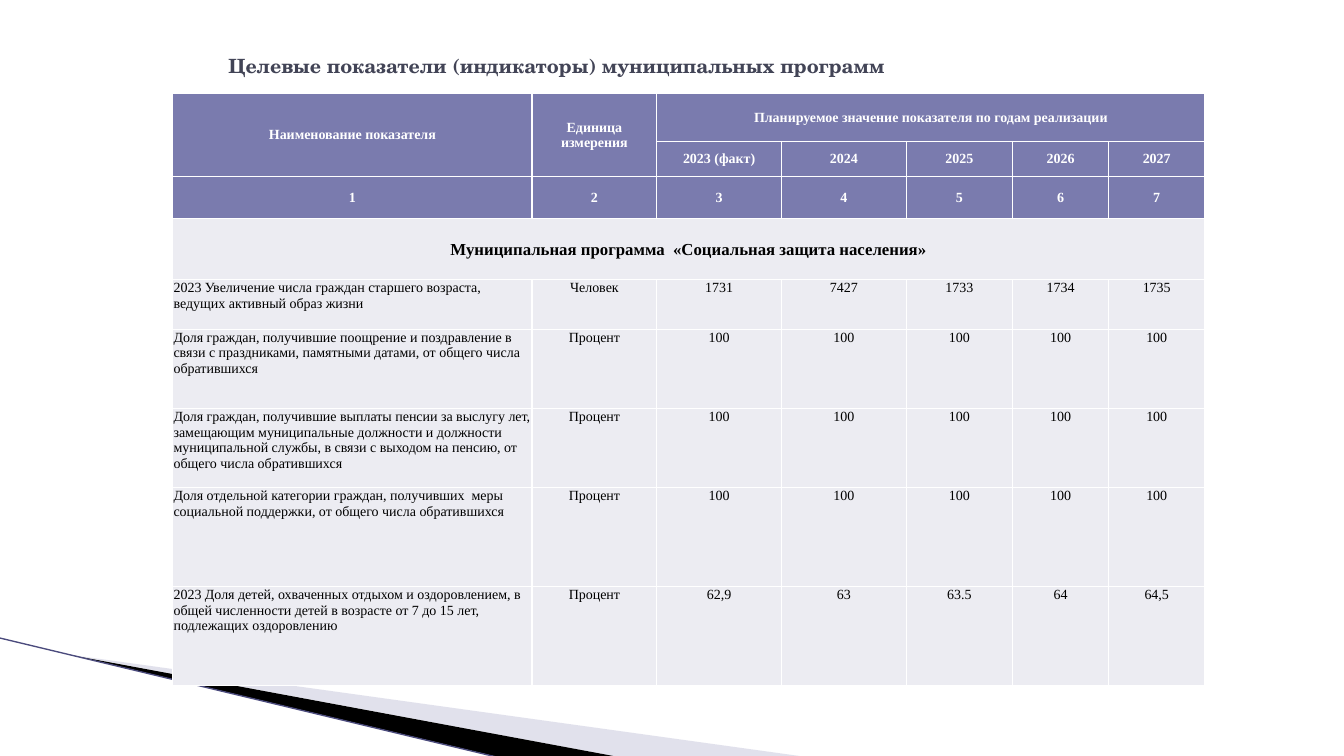
from lxml import etree
from pptx import Presentation
from pptx.dml.color import RGBColor
from pptx.enum.shapes import MSO_CONNECTOR
from pptx.enum.text import MSO_ANCHOR, PP_ALIGN
from pptx.oxml.ns import qn
from pptx.util import Pt

LINE = MSO_CONNECTOR.STRAIGHT
TOP, MIDDLE = MSO_ANCHOR.TOP, MSO_ANCHOR.MIDDLE
LEFT, CENTER = PP_ALIGN.LEFT, PP_ALIGN.CENTER

HEAD = [
    ["Наименование показателя", "Единица измерения",
     "Планируемое значение показателя по годам реализации", "", "", "", ""],
    ["", "", "2023 (факт)", "2024", "2025", "2026", "2027"],
    [str(num) for num in range(1, 8)],
]
GROUP = ["Муниципальная программа  «Социальная защита населения»"] + [""] * 6
FULL = ["Процент"] + ["100"] * 5
BODY = [
    ["2023 Увеличение числа граждан старшего возраста, ведущих активный образ жизни",
     "Человек", "1731", "7427", "1733", "1734", "1735"],
    ["Доля граждан, получившие поощрение и поздравление в связи с праздниками, "
     "памятными датами, от общего числа обратившихся"] + FULL,
    ["Доля граждан, получившие выплаты пенсии за выслугу лет, замещающим "
     "муниципальные должности и должности муниципальной службы, в связи с "
     "выходом на пенсию, от общего числа обратившихся"] + FULL,
    ["Доля отдельной категории граждан, получивших  меры социальной поддержки, "
     "от общего числа обратившихся"] + FULL,
    ["2023 Доля детей, охваченных отдыхом и оздоровлением, в общей численности "
     "детей в возрасте от 7 до 15 лет, подлежащих оздоровлению",
     "Процент", "62,9", "63", "63.5", "64", "64,5"],
]
WIDTHS = [256.6, 89.2, 89, 89.2, 76, 68.6, 68.6]
HEIGHTS = [34.6, 25, 30.3, 43.6, 35.4, 56.6, 56.6, 70.7, 70.7]
MERGES = [(0, 0, 1, 0), (0, 1, 1, 1), (0, 2, 0, 6), (3, 0, 3, 6)]


def tint(code):
    return RGBColor.from_string(code)


class Page:
    serif = "Times New Roman"
    school = "TeX Gyre Schola"
    dark, pale, white, black = "7A7BAE", "ECECF2", "FFFFFF", "000000"

    def __init__(self, deck):
        self.slide = deck.slides.add_slide(deck.slide_layouts[5])
        self.shapes = self.slide.shapes

    def style(self, frame, font, size, color, bold, align):
        for para in frame.paragraphs:
            para.alignment = align
            for run in para.runs:
                run.font.name = font
                run.font.size = Pt(size)
                run.font.bold = bold
                run.font.color.rgb = tint(color)

    def title(self, text, left, top, width, height):
        shape = self.shapes.title
        shape.left, shape.top = Pt(left), Pt(top)
        shape.width, shape.height = Pt(width), Pt(height)
        frame = shape.text_frame
        frame.text = text
        frame.word_wrap = True
        frame.vertical_anchor = MIDDLE
        self.style(frame, self.school, 14, "424456", True, LEFT)

    def wedge(self, points, color, alpha=None):
        start, *rest = points
        form = self.shapes.build_freeform(*start, scale=Pt(1))
        form.add_line_segments(rest)
        shape = form.convert_to_shape()
        shape.shadow.inherit = False
        shape.line.fill.background()
        shape.fill.solid()
        shape.fill.fore_color.rgb = tint(color)
        if alpha:
            node = shape.fill._xPr.find(".//" + qn("a:srgbClr"))
            etree.SubElement(node, qn("a:alpha"), val=str(alpha * 1000))

    def line(self, start, end, color, width):
        ends = [Pt(num) for num in (*start, *end)]
        rule = self.shapes.add_connector(LINE, *ends)
        rule.line.color.rgb = tint(color)
        rule.line.width = Pt(width)
        etree.SubElement(rule._element.spPr, qn("a:effectLst"))

    def edge(self, cell):
        props = cell._tc.get_or_add_tcPr()
        for spot, side in enumerate(("lnL", "lnR", "lnT", "lnB")):
            node = etree.Element(qn("a:" + side), w=str(Pt(1)))
            fill = etree.SubElement(node, qn("a:solidFill"))
            etree.SubElement(fill, qn("a:srgbClr"), val=self.white)
            props.insert(spot, node)

    def cell(self, cell, text, fill, color, size, bold, align, anchor):
        cell.text = text
        cell.margin_left = cell.margin_right = cell.margin_top = Pt(0.6)
        cell.margin_bottom = Pt(0)
        cell.vertical_anchor = anchor
        cell.fill.solid()
        cell.fill.fore_color.rgb = tint(fill)
        self.edge(cell)
        self.style(cell.text_frame, self.serif, size, color, bold, align)

    def table(self, left, top):
        rows = HEAD + [GROUP] + BODY
        box = self.shapes.add_table(
            len(rows), len(WIDTHS), Pt(left), Pt(top),
            Pt(sum(WIDTHS)), Pt(sum(HEIGHTS)))
        grid = box.table
        for col, width in zip(grid.columns, WIDTHS):
            col.width = Pt(width)
        for row, height in zip(grid.rows, HEIGHTS):
            row.height = Pt(height)
        split = len(HEAD)
        for i, row in enumerate(rows):
            fill, color = (self.dark, self.white) if i < split else (self.pale, self.black)
            size = 12 if i == split else 10
            bold = i <= split
            anchor = MIDDLE if bold else TOP
            for j, text in enumerate(row):
                align = CENTER if bold or j else LEFT
                self.cell(grid.cell(i, j), text, fill, color, size, bold, align, anchor)
        for top_row, first, last_row, last in MERGES:
            grid.cell(top_row, first).merge(grid.cell(last_row, last))


def main():
    deck = Presentation()
    deck.slide_width, deck.slide_height = Pt(960), Pt(540)
    page = Page(deck)
    page.wedge([(52.5, 468.4), (571, 540.5), (437.5, 540.5)], "B6B6D1", 40)
    page.wedge([(51.2, 467.5), (438.5, 540.5), (357, 541.2), (51.8, 468)], page.black)
    page.line((-0.7, 455.6), (356.6, 541.2), "4B4B7D", 0.95)
    page.title("Целевые показатели (индикаторы) муниципальных программ",
               156, 21.8, 648, 49.7)
    page.table(123.4, 66.4)
    deck.save("out.pptx")


if __name__ == "__main__":
    main()
